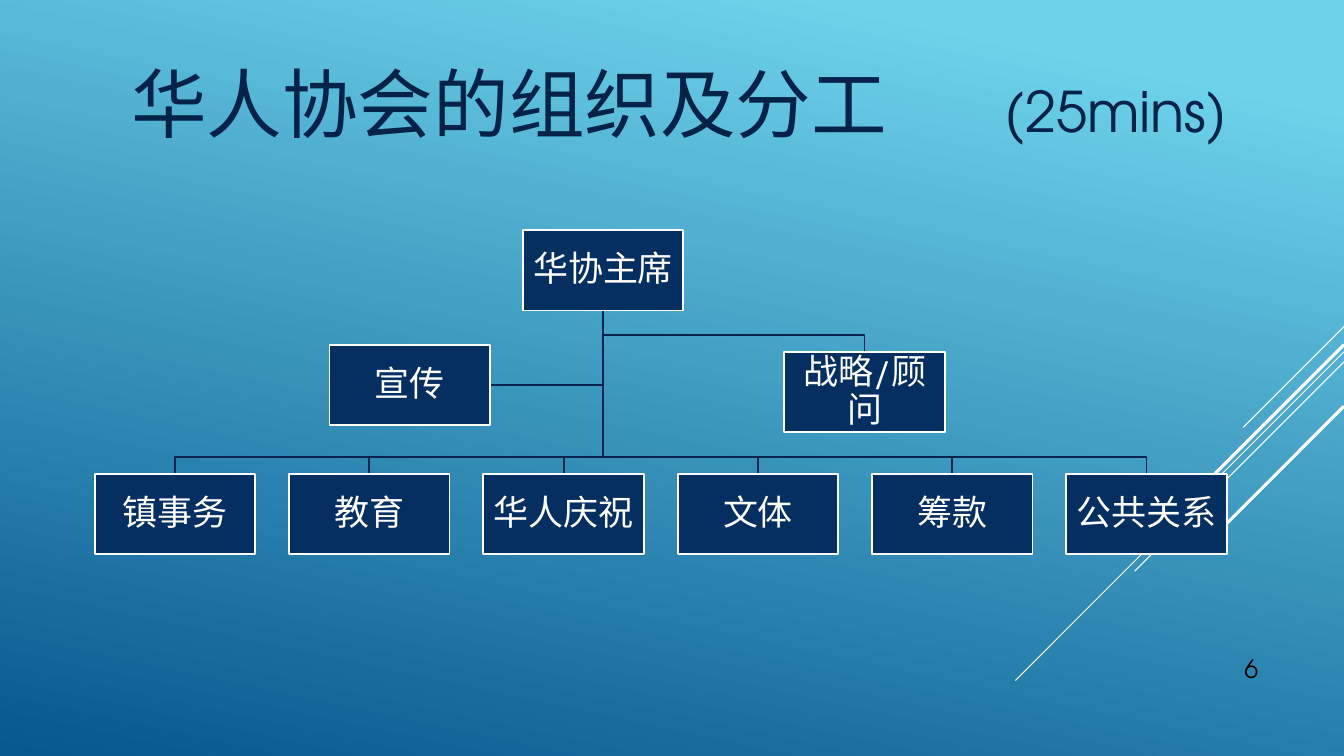
import pptx
import pptx.dml.color
import pptx.enum.lang
import pptx.enum.shapes
import pptx.enum.text
import pptx.util
from lxml import etree
from pptx.oxml.ns import qn

Pt = pptx.util.Pt
ALIGN = pptx.enum.text.PP_ALIGN
ANCHOR = pptx.enum.text.MSO_ANCHOR
BOX_WIDTH, BOX_HEIGHT = 114.7, 57.4


def rgb(value):
    return pptx.dml.color.RGBColor.from_string(value)


def style_run(run, size, color):
    run.font.name = "TeX Gyre Adventor"
    run.font.size = Pt(size)
    run.font.color.rgb = rgb(color)
    run.font.language_id = pptx.enum.lang.MSO_LANGUAGE_ID.SIMPLIFIED_CHINESE


presentation = pptx.Presentation()
presentation.slide_width = Pt(960)
presentation.slide_height = Pt(540)
slide = presentation.slides.add_slide(presentation.slide_layouts[5])

# Background gradient
background = slide.background.fill
background.gradient()
background.gradient_angle = 258
for stop, (position, color) in zip(background.gradient_stops, [(0.1, "6ED2EB"), (1, "06588E")]):
    stop.position = position
    stop.color.rgb = rgb(color)

# Diagonal streaks run down and left at 45 degrees from the right edge
for top, reach, weight in [(233.3, 72, 0.75), (251.3, 234.7, 0.75), (258.5, 149.5, 0.75),
                           (246.2, 137.5, 2.25), (290.2, 100, 2.25)]:
    streak = slide.shapes.add_connector(
        pptx.enum.shapes.MSO_CONNECTOR.STRAIGHT, Pt(960), Pt(top), Pt(960 - reach), Pt(top + reach))
    streak.line.color.rgb = rgb("FFFFFF")
    streak.line.width = Pt(weight)
    etree.SubElement(streak._element.spPr, qn("a:effectLst"))

# Title, with the duration at a tab stop
title = slide.shapes.title
title.left, title.top, title.width, title.height = Pt(86.4), Pt(37.4), Pt(873.6), Pt(90)
title_frame = title.text_frame
title_frame.word_wrap = True
title_frame.auto_size = pptx.enum.text.MSO_AUTO_SIZE.NONE
title_frame.vertical_anchor = ANCHOR.TOP
heading = title_frame.paragraphs[0]
heading.text = "华人协会的组织及分工\t"
heading.alignment = ALIGN.LEFT
duration = heading.add_run()
duration.text = "(25mins)"
style_run(heading.runs[0], 54, "042349")
style_run(duration, 40, "042349")
tab_stops = etree.SubElement(heading._p.get_or_add_pPr(), qn("a:tabLst"))
etree.SubElement(tab_stops, qn("a:tab"), pos=str(Pt(624)), algn="l")

# Page number
page_number = slide.shapes.add_textbox(Pt(815.8), Pt(439.2), Pt(90), Pt(52.6)).text_frame
page_number.word_wrap = True
page_number.vertical_anchor = ANCHOR.BOTTOM
page_number.text = "6"
page_number.paragraphs[0].alignment = ALIGN.RIGHT
style_run(page_number.paragraphs[0].runs[0], 18, "000000")

# Organisation chart positions: name, left, top
chair = ("华协主席", 373.4, 164.4)
publicity = ("宣传", 235.4, 246.2)
advisers = ("战略/顾问", 560.2, 251.3)
department_names = ["镇事务", "教育", "华人庆祝", "文体", "筹款", "公共关系"]
departments = [(name, 67.7 + 138.8 * column, 338.4) for column, name in enumerate(department_names)]

# Branches from the bottom of the chair's box
trunk_x = chair[1] + BOX_WIDTH / 2
trunk_top = chair[2] + BOX_HEIGHT
publicity_y = publicity[2] + BOX_HEIGHT / 2
branches = [[(trunk_x, publicity_y), (publicity[1] + BOX_WIDTH, publicity_y)]]
for _, left, top in [advisers] + departments:
    center = left + BOX_WIDTH / 2
    branches.append([(trunk_x, top - 12), (center, top - 12), (center, top)])
for corners in branches:
    builder = slide.shapes.build_freeform(Pt(trunk_x), Pt(trunk_top))
    builder.add_line_segments([(Pt(x), Pt(y)) for x, y in corners], close=False)
    branch = builder.convert_to_shape()
    branch.shadow.inherit = False
    branch.fill.background()
    branch.line.color.rgb = rgb("04264E")
    branch.line.width = Pt(1.25)

# Boxes
for name, left, top in [chair] + departments + [advisers, publicity]:
    box = slide.shapes.add_shape(pptx.enum.shapes.MSO_SHAPE.RECTANGLE,
                                 Pt(left), Pt(top), Pt(BOX_WIDTH), Pt(BOX_HEIGHT))
    box.shadow.inherit = False
    box.fill.solid()
    box.fill.fore_color.rgb = rgb("052F61")
    box.line.color.rgb = rgb("FFFFFF")
    box.line.width = Pt(1.25)
    frame = box.text_frame
    frame.margin_left = frame.margin_right = frame.margin_top = frame.margin_bottom = Pt(1.25)
    frame.word_wrap = True
    frame.vertical_anchor = ANCHOR.MIDDLE
    frame.text = name
    label = frame.paragraphs[0]
    label.alignment = ALIGN.CENTER
    label.line_spacing = 0.9
    style_run(label.runs[0], 25, "FFFFFF")

presentation.save("out.pptx")
